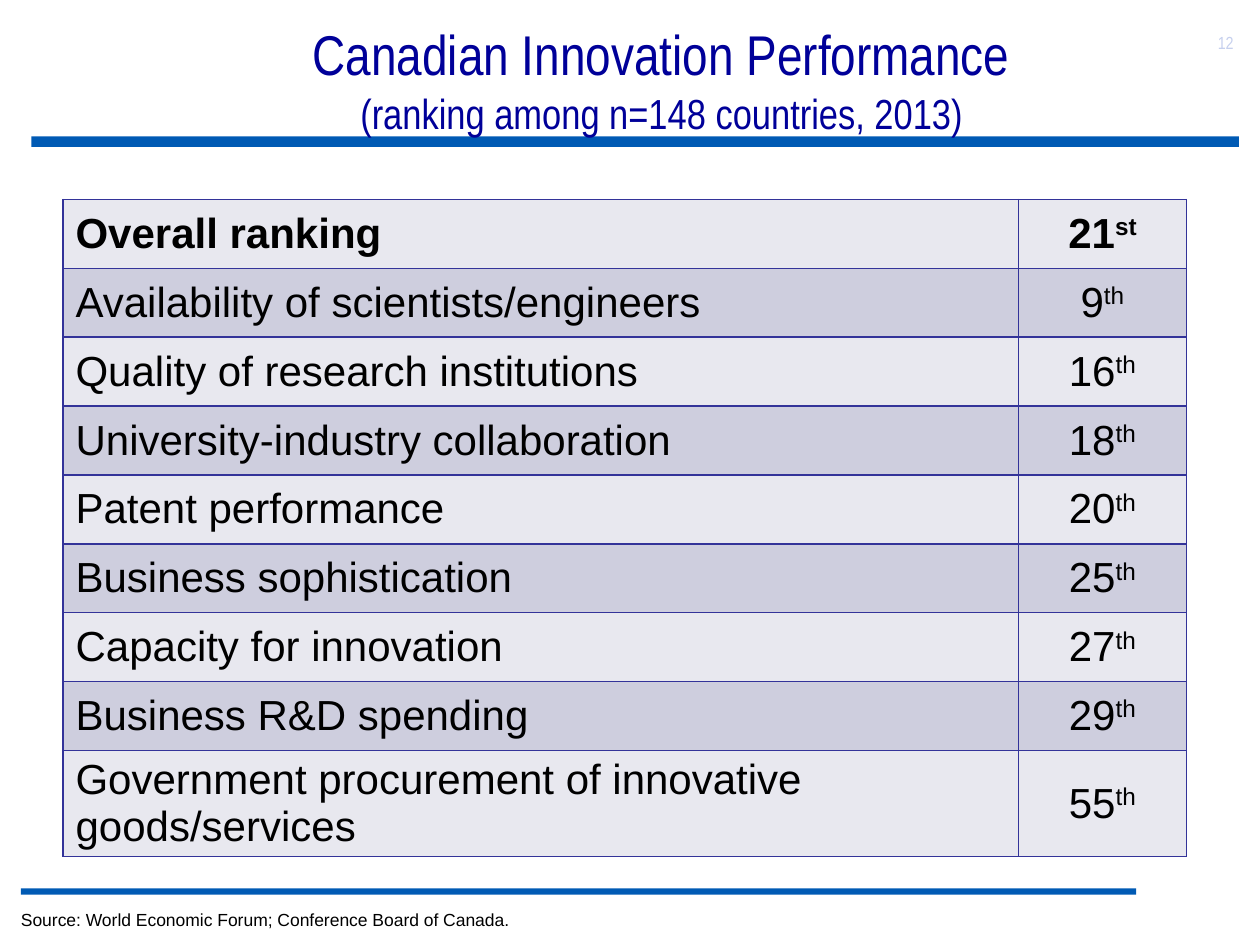
from dataclasses import dataclass

from lxml.etree import SubElement
from pptx import Presentation
from pptx.dml.color import RGBColor
from pptx.enum.shapes import MSO_SHAPE as Shape
from pptx.enum.text import MSO_ANCHOR as Anchor, MSO_AUTO_SIZE as AutoSize, PP_ALIGN as Align
from pptx.oxml.ns import qn
from pptx.util import Inches, Pt


@dataclass(frozen=True)
class Theme:
    title_font: str = "Arial Narrow"
    body_font: str = "Arial"
    title_size: int = 32
    body_size: int = 24
    small_size: int = 10
    title: str = "000099"
    text: str = "000000"
    number: str = "C6D0EE"
    bar: str = "005AB4"
    border: str = "333399"
    bands: tuple = ("E8E8EF", "CECEDE")


THEME = Theme()
GRID_COLUMNS = 120
SLIDE_WIDTH, SLIDE_HEIGHT = Inches(10), Inches(7.5)
RANKINGS = [
    ("Overall ranking", "21", "st"),
    ("Availability of scientists/engineers", "9", "th"),
    ("Quality of research institutions", "16", "th"),
    ("University-industry collaboration", "18", "th"),
    ("Patent performance", "20", "th"),
    ("Business sophistication", "25", "th"),
    ("Capacity for innovation", "27", "th"),
    ("Business R&D spending", "29", "th"),
    ("Government procurement of innovative goods/services", "55", "th"),
]


def grid(*units):
    return [round(unit * SLIDE_WIDTH / GRID_COLUMNS) for unit in units]


def add_span(para, text, *, size=THEME.body_size, font=THEME.body_font,
             color=THEME.text, bold=False, raised=False):
    span = para.add_run()
    span.text = text
    span.font.size = Pt(size)
    span.font.name = font
    span.font.bold = bold
    span.font.color.rgb = RGBColor.from_string(color)
    if raised:
        span.font._element.set("baseline", "30000")


def add_bar(page, *place):
    bar = page.shapes.add_shape(Shape.RECTANGLE, *grid(*place))
    bar.shadow.inherit = False
    bar.fill.solid()
    bar.fill.fore_color.rgb = RGBColor.from_string(THEME.bar)
    bar.line.fill.background()
    page.shapes.title.element.addprevious(bar.element)


def set_title(page, heading, subheading, *place):
    title = page.shapes.title
    title.left, title.top, title.width, title.height = grid(*place)
    frame = title.text_frame
    frame.auto_size = AutoSize.NONE
    frame.vertical_anchor = Anchor.MIDDLE
    para = frame.paragraphs[0]
    para.alignment = Align.CENTER
    style = dict(font=THEME.title_font, color=THEME.title)
    add_span(para, heading, size=THEME.title_size, **style)
    para.add_line_break()
    add_span(para, subheading, **style)


def add_note(page, text, *place, inset=None, **style):
    box = page.shapes.add_textbox(*grid(*place))
    frame = box.text_frame
    frame.word_wrap = True
    if inset is not None:
        frame.margin_left = frame.margin_right = Inches(inset)
    add_span(frame.paragraphs[0], text, size=THEME.small_size, **style)


def format_cell(cell, band):
    cell.vertical_anchor = Anchor.MIDDLE
    properties = cell._tc.get_or_add_tcPr()
    for side in ("a:lnL", "a:lnR", "a:lnT", "a:lnB"):
        line = SubElement(properties, qn(side), w=str(Pt(1)))
        fill = SubElement(line, qn("a:solidFill"))
        SubElement(fill, qn("a:srgbClr"), val=THEME.border)
    cell.fill.solid()
    cell.fill.fore_color.rgb = RGBColor.from_string(band)


def add_ranking_table(page, rankings, left, top, widths, row_height):
    place = grid(left, top, sum(widths), row_height * len(rankings))
    table = page.shapes.add_table(len(rankings), len(widths), *place).table
    table.first_row = table.horz_banding = False
    for column, width in zip(table.columns, grid(*widths)):
        column.width = width
    for index, (label, rank, suffix) in enumerate(rankings):
        table.rows[index].height = grid(row_height)[0]
        label_cell, rank_cell = table.rows[index].cells
        for cell in (label_cell, rank_cell):
            format_cell(cell, THEME.bands[index % 2])
        bold = index == 0
        add_span(label_cell.text_frame.paragraphs[0], label, bold=bold)
        para = rank_cell.text_frame.paragraphs[0]
        para.alignment = Align.CENTER
        add_span(para, rank, bold=bold)
        add_span(para, suffix, bold=bold, raised=True)


def main():
    deck = Presentation()
    deck.slide_width, deck.slide_height = SLIDE_WIDTH, SLIDE_HEIGHT
    page = deck.slides.add_slide(deck.slide_layouts.get_by_name("Title Only"))
    add_bar(page, 3, 13, 115, 1)
    add_bar(page, 2, 84.6, 106.2, 0.6)
    set_title(page, "Canadian Innovation Performance",
              "(ranking among n=148 countries, 2013)", 8, 2, 110, 11)
    add_ranking_table(page, RANKINGS, 6, 19, (91, 16), 6.56)
    add_note(page, "Source: World Economic Forum; Conference Board of Canada.",
             2, 86, 102, 3.2, inset=0)
    add_note(page, "12", 114.8, 2.5, 5.2, 6, font=THEME.title_font, color=THEME.number)
    deck.save("out.pptx")


if __name__ == "__main__":
    main()
